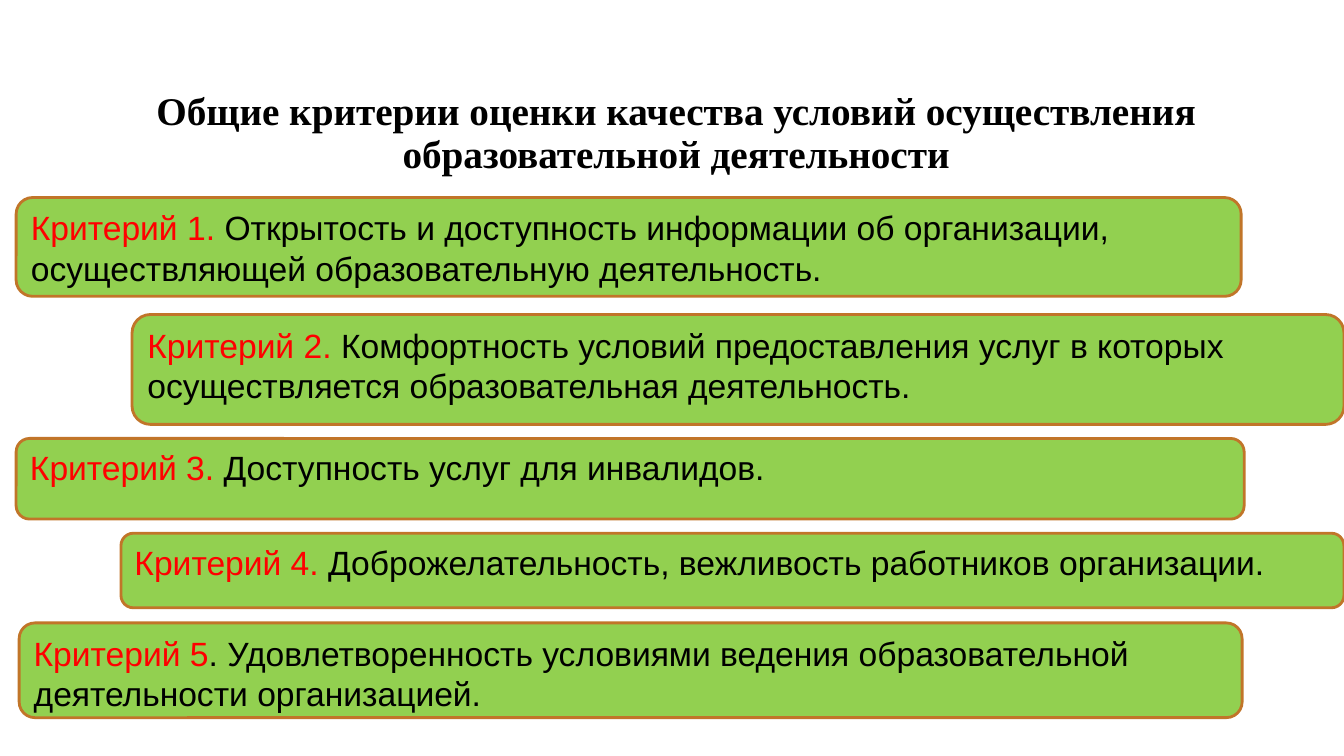
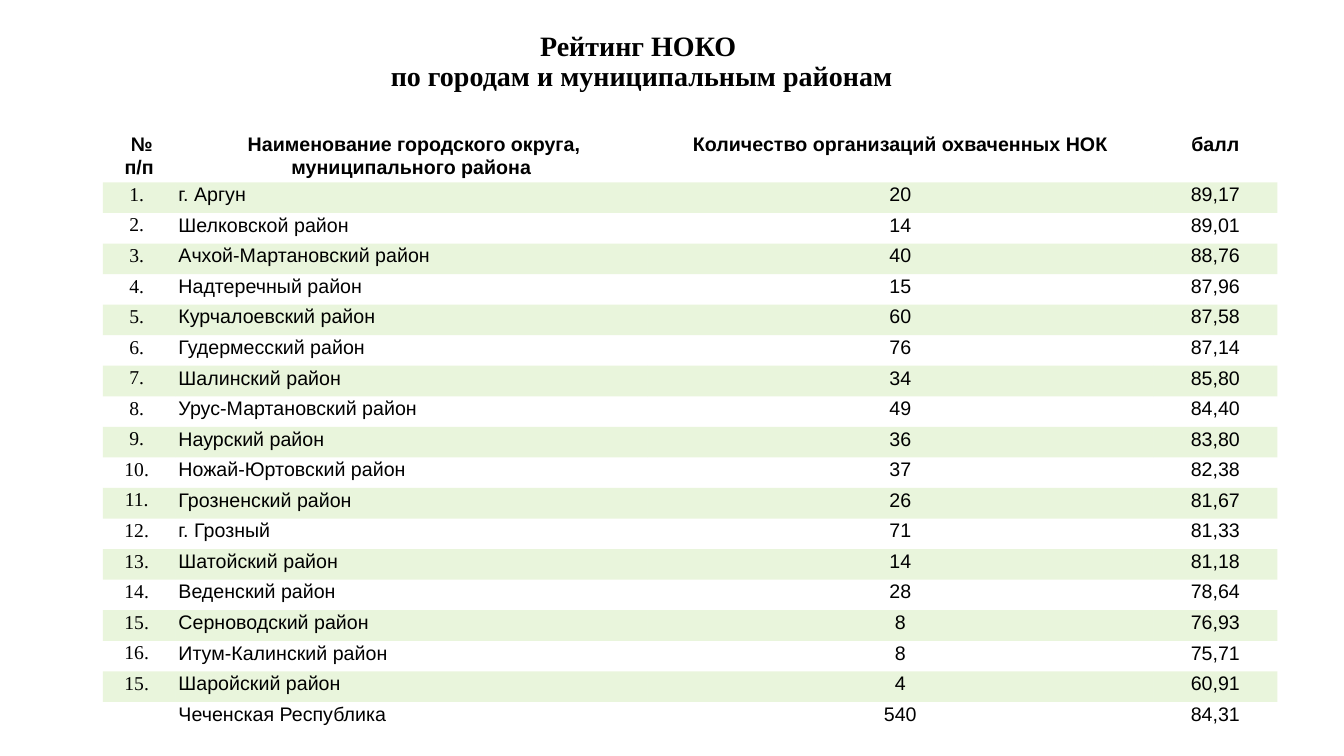
from lxml import etree
from pptx import Presentation
from pptx.dml.color import RGBColor
from pptx.enum.shapes import MSO_SHAPE
from pptx.enum.text import MSO_ANCHOR, PP_ALIGN
from pptx.oxml.ns import qn
from pptx.util import Inches, Pt

ROUNDED = MSO_SHAPE.ROUNDED_RECTANGLE
TOP, BOTTOM = MSO_ANCHOR.TOP, MSO_ANCHOR.BOTTOM
LEFT, CENTER = PP_ALIGN.LEFT, PP_ALIGN.CENTER

COLORS = {"text": "000000", "accent": "FF0000", "green": "92D050", "outline": "C17529"}
SANS, SERIF = "Arial", "Times New Roman"
PLAIN_TABLE_STYLE = "{2D5ABB26-0587-4C30-8999-92F81FD0307C}"
BAND_OPACITY = 20

CRITERIA_TITLE = ["Общие критерии оценки качества условий осуществления образовательной деятельности"]
CRITERIA = [
    ((0.16, 1.96, 12.15, 0.98), "Критерий 1. ",
     "Открытость и доступность информации об организации, осуществляющей образовательную деятельность."),
    ((1.31, 3.12, 12.02, 1.09), "Критерий 2. ",
     "Комфортность условий предоставления услуг в которых осуществляется образовательная деятельность."),
    ((0.16, 4.35, 12.18, 0.8), "Критерий 3. ", "Доступность услуг для инвалидов."),
    ((1.2, 5.29, 12.13, 0.74), "Критерий 4. ", "Доброжелательность, вежливость работников организации."),
    ((0.19, 6.18, 12.13, 0.94), "Критерий 5",
     ". Удовлетворенность условиями ведения образовательной деятельности организацией."),
]

RATING_TITLE = ["Рейтинг НОКО ", "по городам и муниципальным районам"]
RATING_HEADER = [
    [" №", "п/п"],
    [" Наименование городского округа, муниципального района"],
    ["Количество организаций охваченных НОК"],
    ["балл"],
]
RATING = [
    ("1. ", "г. Аргун", "20", "89,17"),
    ("2. ", "Шелковской район", "14", "89,01"),
    ("3. ", "Ачхой-Мартановский район", "40", "88,76"),
    ("4. ", "Надтеречный район", "15", "87,96"),
    ("5. ", "Курчалоевский район", "60", "87,58"),
    ("6. ", "Гудермесский район", "76", "87,14"),
    ("7. ", "Шалинский район", "34", "85,80"),
    ("8. ", "Урус-Мартановский район", "49", "84,40"),
    ("9. ", "Наурский район", "36", "83,80"),
    ("10. ", "Ножай-Юртовский район", "37", "82,38"),
    ("11. ", "Грозненский район", "26", "81,67"),
    ("12. ", "г. Грозный", "71", "81,33"),
    ("13. ", "Шатойский район", "14", "81,18"),
    ("14. ", "Веденский район", "28", "78,64"),
    ("15. ", "Серноводский район", "8", "76,93"),
    ("16. ", "Итум-Калинский район", "8", "75,71"),
    ("15. ", "Шаройский район", "4", "60,91"),
    ("", "Чеченская Республика", "540", "84,31"),
]
COLUMN_WIDTHS = [0.72, 4.68, 5.02, 1.23]
COLUMN_FORMATS = [(SERIF, CENTER), (SANS, LEFT), (SANS, CENTER), (SANS, CENTER)]
HEADER_HEIGHT = 0.31
CELL_FORMAT = {
    "margin_left": Inches(0.03), "margin_right": Inches(0.03),
    "margin_top": 0, "margin_bottom": 0, "vertical_anchor": TOP,
}


def rgb(name):
    return RGBColor.from_string(COLORS[name])


def apply_format(target, values):
    for attribute, value in values.items():
        setattr(target, attribute, value)


def add_run(paragraph, text, size, font=SANS, color="text", bold=False):
    run = paragraph.add_run()
    run.text = text
    apply_format(run.font, {"size": Pt(size), "name": font, "bold": bold})
    run.font.color.rgb = rgb(color)


def write_lines(frame, lines, spacing, align, **run_format):
    """Write each line as its own paragraph."""
    for index, line in enumerate(lines):
        paragraph = frame.add_paragraph() if index else frame.paragraphs[0]
        apply_format(paragraph, {"alignment": align, "line_spacing": spacing})
        add_run(paragraph, line, **run_format)


def add_title(slide, box, lines, size):
    frame = slide.shapes.add_textbox(*map(Inches, box)).text_frame
    apply_format(frame, {"word_wrap": True, "vertical_anchor": BOTTOM})
    write_lines(frame, lines, 0.9, CENTER, size=size, font=SERIF, bold=True)


def add_criterion(slide, box, label, description):
    card = slide.shapes.add_shape(ROUNDED, *map(Inches, box))
    card.shadow.inherit = False
    card.fill.solid()
    card.fill.fore_color.rgb = rgb("green")
    card.line.color.rgb = rgb("outline")
    card.line.width = Pt(2)
    apply_format(card.text_frame, {"word_wrap": True, "vertical_anchor": TOP})
    paragraph = card.text_frame.paragraphs[0]
    paragraph.alignment = LEFT
    add_run(paragraph, label, 24, color="accent")
    add_run(paragraph, description, 24)


def fill_cell(cell, banded):
    if not banded:
        cell.fill.background()
        return
    cell.fill.solid()
    cell.fill.fore_color.rgb = rgb("green")
    color = cell.fill._xPr.find(".//" + qn("a:srgbClr"))
    etree.SubElement(color, qn("a:alpha")).set("val", str(BAND_OPACITY * 1000))


def add_rating_table(slide, box):
    frame = slide.shapes.add_table(len(RATING) + 1, len(COLUMN_WIDTHS), *map(Inches, box))
    frame.element.find(".//" + qn("a:tableStyleId")).text = PLAIN_TABLE_STYLE
    table = frame.table
    apply_format(table, {"first_row": False, "horz_banding": False})
    for column, width in zip(table.columns, COLUMN_WIDTHS):
        column.width = Inches(width)
    row_height = (box[3] - HEADER_HEIGHT) / len(RATING)
    for index, row in enumerate(table.rows):
        row.height = Inches(row_height if index else HEADER_HEIGHT)

    rows = [RATING_HEADER] + [[[text] for text in row] for row in RATING]
    for row_index, row in enumerate(rows):
        is_header = row_index == 0
        for column_index, lines in enumerate(row):
            cell = table.cell(row_index, column_index)
            apply_format(cell, CELL_FORMAT)
            fill_cell(cell, row_index % 2 == 1)
            font, align = (SANS, CENTER) if is_header else COLUMN_FORMATS[column_index]
            if any(lines):
                write_lines(cell.text_frame, lines, 1.07, align, size=14, font=font, bold=is_header)


def build_criteria_slide(slide):
    add_title(slide, (0.98, 0.88, 11.45, 0.92), CRITERIA_TITLE, 28)
    for box, label, description in CRITERIA:
        add_criterion(slide, box, label, description)


def build_rating_slide(slide):
    add_title(slide, (3.45, 0.36, 5.83, 0.61), RATING_TITLE, 20)
    add_rating_table(slide, (1.02, 1.31, 11.65, 5.77))


def main():
    presentation = Presentation()
    apply_format(presentation, {"slide_width": Inches(13.33), "slide_height": Inches(7.5)})
    blank = presentation.slide_layouts[6]
    for build in (build_criteria_slide, build_rating_slide):
        build(presentation.slides.add_slide(blank))
    presentation.save("out.pptx")


if __name__ == "__main__":
    main()
